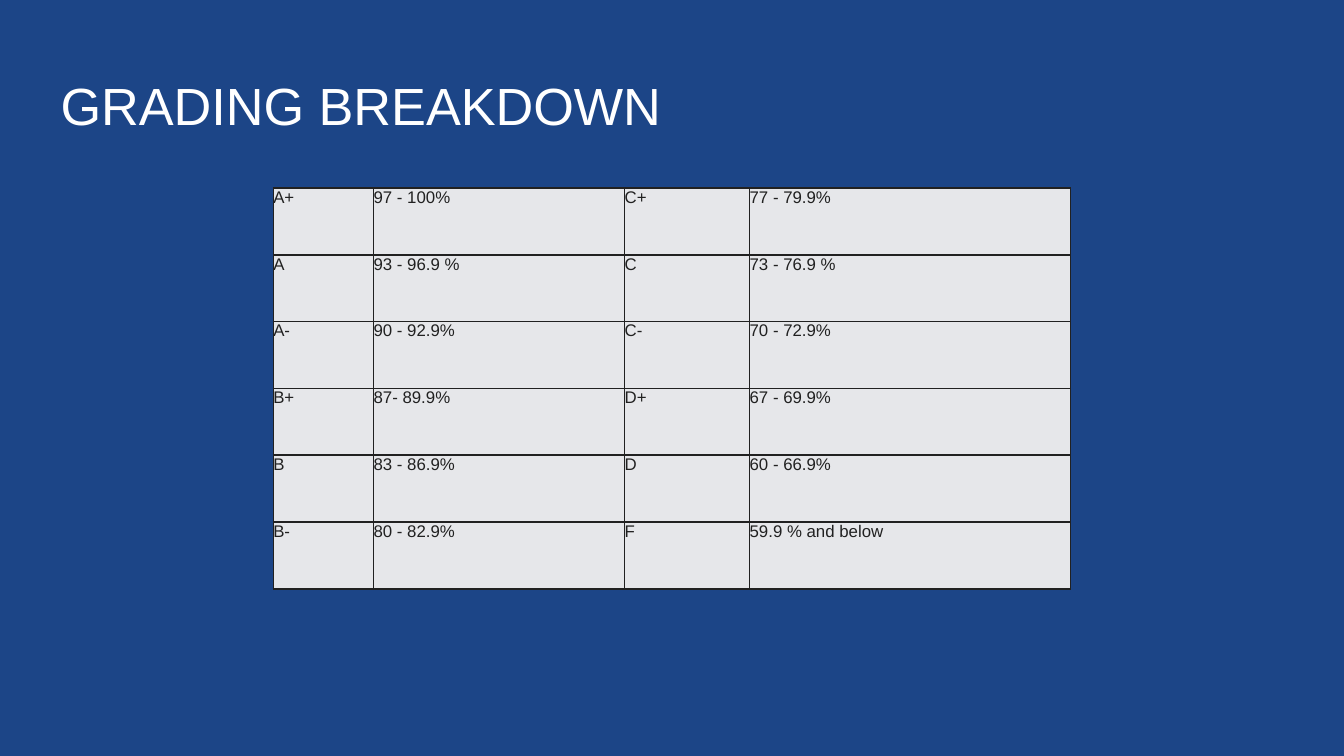
from lxml.etree import SubElement
from pptx import Presentation
from pptx.dml.color import RGBColor
from pptx.enum.text import MSO_ANCHOR as Anchor
from pptx.oxml.ns import qn
from pptx.util import Pt

BLUE = RGBColor(0x1C, 0x45, 0x87)
WHITE = RGBColor(0xFF, 0xFF, 0xFF)
GRAY = RGBColor(0xE6, 0xE7, 0xEA)
DARK = RGBColor(0x21, 0x21, 0x21)

GRADES = [
    ("A+", "97 - 100%", "C+", "77 - 79.9%"),
    ("A", "93 - 96.9 %", "C", "73 - 76.9 %"),
    ("A-", "90 - 92.9%", "C-", "70 - 72.9%"),
    ("B+", "87- 89.9%", "D+", "67 - 69.9%"),
    ("B", "83 - 86.9%", "D", "60 - 66.9%"),
    ("B-", "80 - 82.9%", "F", "59.9 % and below"),
]
COLUMN_WIDTHS = [53.75, 134.5, 67, 172]
ROW_HEIGHT = 35.8
CELL_FORMAT = {
    "margin_left": 0,
    "margin_right": 0,
    "margin_top": 0,
    "margin_bottom": 0,
    "vertical_anchor": Anchor.TOP,
}
TITLE_FORMAT = {
    "margin_left": Pt(5),
    "margin_right": Pt(5),
    "margin_top": Pt(3),
    "margin_bottom": Pt(3),
    "vertical_anchor": Anchor.MIDDLE,
    "word_wrap": True,
}


def write_text(text_frame, text, size, color):
    run = text_frame.paragraphs[0].add_run()
    run.text = text
    run.font.name = "Arial"
    run.font.size = Pt(size)
    run.font.color.rgb = color


def add_borders(cell):
    """Line all four sides; borders must precede the fill in the cell XML."""
    properties = cell._tc.get_or_add_tcPr()
    for side in ("a:lnL", "a:lnR", "a:lnT", "a:lnB"):
        line = SubElement(properties, qn(side), w=str(Pt(1)))
        fill = SubElement(line, qn("a:solidFill"))
        SubElement(fill, qn("a:srgbClr"), val=str(DARK))


presentation = Presentation()
presentation.slide_width = Pt(720)
presentation.slide_height = Pt(405)
slide = presentation.slides.add_slide(presentation.slide_layouts[6])
slide.background.fill.solid()
slide.background.fill.fore_color.rgb = BLUE

title = slide.shapes.add_textbox(Pt(27.5), Pt(31), Pt(486), Pt(50.5))
for name, value in TITLE_FORMAT.items():
    setattr(title.text_frame, name, value)
write_text(title.text_frame, "GRADING BREAKDOWN", 28, WHITE)

table = slide.shapes.add_table(
    len(GRADES), len(COLUMN_WIDTHS), Pt(146.4), Pt(100.8),
    Pt(sum(COLUMN_WIDTHS)), Pt(ROW_HEIGHT * len(GRADES)),
).table
table.first_row = False
table.horz_banding = False
for column, width in zip(table.columns, COLUMN_WIDTHS):
    column.width = Pt(width)

for row, texts in zip(table.rows, GRADES):
    row.height = Pt(ROW_HEIGHT)
    for cell, text in zip(row.cells, texts):
        for name, value in CELL_FORMAT.items():
            setattr(cell, name, value)
        add_borders(cell)
        cell.fill.solid()
        cell.fill.fore_color.rgb = GRAY
        write_text(cell.text_frame, text, 9, DARK)

presentation.save("out.pptx")
